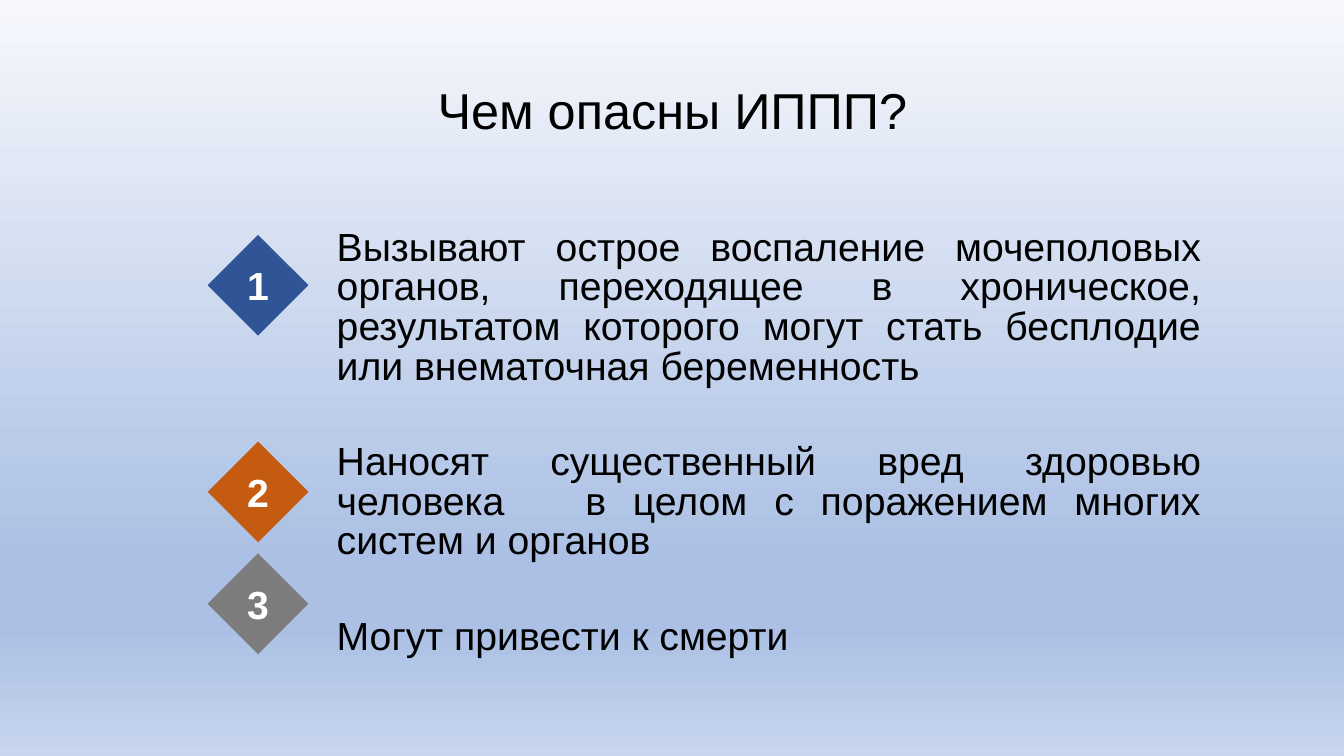
import pptx
import pptx.util
import pptx.dml.color
import pptx.enum.shapes
import pptx.enum.text
import pptx.oxml
import pptx.oxml.ns
from dataclasses import dataclass

Inches = pptx.util.Inches
Pt = pptx.util.Pt
ALIGN = pptx.enum.text.PP_ALIGN
ANCHOR = pptx.enum.text.MSO_ANCHOR


@dataclass(frozen=True)
class Theme:
    font: str = "Arial"
    ink: str = "000000"
    badge_ink: str = "FFFFFF"
    title_size: int = 36
    body_size: int = 28
    # Percent along the slide height, colour
    backdrop: tuple = ((0, "F6F8FC"), (74, "ABC0E4"), (83, "ABC0E4"), (100, "C7D5ED"))


THEME = Theme()

# Badge offset from the top of the list, badge colour, text
DANGERS = [
    (0.1, "2F5597", "Вызывают острое воспаление мочеполовых органов, переходящее в "
                    "хроническое, результатом которого могут стать бесплодие или "
                    "внематочная беременность"),
    (2.15, "C55A11", "Наносят существенный вред здоровью человека   в целом с "
                     "поражением многих систем и органов"),
    (3.26, "7C7C7C", "Могут привести к смерти"),
]
BADGE_SIZE = 1.0
TEXT_INDENT = 1.18


def rgb(code):
    return pptx.dml.color.RGBColor.from_string(code)


def place(shape, box):
    shape.left, shape.top, shape.width, shape.height = (Inches(side) for side in box)


def add_span(para, text, size, color, bold=False):
    span = para.add_run()
    span.text = text
    span.font.name = THEME.font
    span.font.size = Pt(size)
    span.font.bold = bold
    span.font.color.rgb = rgb(color)


def paint_backdrop(page):
    fill = page.background.fill
    fill.gradient()
    gradient = page.element.xpath(".//p:bg//a:gradFill")[0]
    for child in list(gradient):
        gradient.remove(child)
    stops = "".join(
        f'<a:gs pos="{percent * 1000}"><a:srgbClr val="{color}"/></a:gs>'
        for percent, color in THEME.backdrop
    )
    namespace = pptx.oxml.ns.nsdecls("a")
    gradient.append(pptx.oxml.parse_xml(f"<a:gsLst {namespace}>{stops}</a:gsLst>"))
    gradient.append(pptx.oxml.parse_xml(f'<a:lin {namespace} ang="5400000" scaled="0"/>'))


def fill_title(page, box, text):
    title = page.shapes.title
    place(title, box)
    frame = title.text_frame
    frame.vertical_anchor = ANCHOR.MIDDLE
    frame.auto_size = pptx.enum.text.MSO_AUTO_SIZE.NONE
    para = frame.paragraphs[0]
    para.alignment = ALIGN.CENTER
    para.line_spacing = 0.9
    add_span(para, text, THEME.title_size, THEME.ink)


def add_badge(page, box, number, color):
    badge = page.shapes.add_shape(
        pptx.enum.shapes.MSO_SHAPE.DIAMOND, *(Inches(side) for side in box))
    badge.shadow.inherit = False
    badge.fill.solid()
    badge.fill.fore_color.rgb = rgb(color)
    badge.line.fill.background()
    frame = badge.text_frame
    frame.margin_left = frame.margin_right = frame.margin_top = frame.margin_bottom = 0
    frame.word_wrap = False
    frame.vertical_anchor = ANCHOR.MIDDLE
    para = frame.paragraphs[0]
    para.alignment = ALIGN.CENTER
    add_span(para, str(number), THEME.body_size, THEME.badge_ink, bold=True)


def fill_dangers(page, box, dangers):
    left, top, width, height = box
    body = page.placeholders[1]
    place(body, box)
    frame = body.text_frame
    frame.vertical_anchor = ANCHOR.TOP
    frame.auto_size = pptx.enum.text.MSO_AUTO_SIZE.NONE
    for number, (offset, color, text) in enumerate(dangers, start=1):
        # Justified paragraph, indented to clear the badges
        para = frame.paragraphs[0] if number == 1 else frame.add_paragraph()
        para.alignment = ALIGN.JUSTIFY
        para.line_spacing = 0.84
        para.space_before = Pt(40)
        properties = para._p.get_or_add_pPr()
        properties.set("marL", str(Inches(TEXT_INDENT)))
        properties.set("indent", "0")
        properties.append(pptx.oxml.parse_xml(f"<a:buNone {pptx.oxml.ns.nsdecls('a')}/>"))
        add_span(para, text, THEME.body_size, THEME.ink)
        # Numbered diamond at the left edge
        add_badge(page, (left, top + offset, BADGE_SIZE, BADGE_SIZE), number, color)


def main():
    deck = pptx.Presentation()
    deck.slide_width = Inches(13.33)
    deck.slide_height = Inches(7.5)
    page = deck.slides.add_slide(deck.slide_layouts[1])
    paint_backdrop(page)
    fill_title(page, (2.06, 0.4, 9.22, 1.45), "Чем опасны ИППП?")
    fill_dangers(page, (2.06, 2.23, 9.95, 4.52), DANGERS)
    deck.save("out.pptx")


if __name__ == "__main__":
    main()
